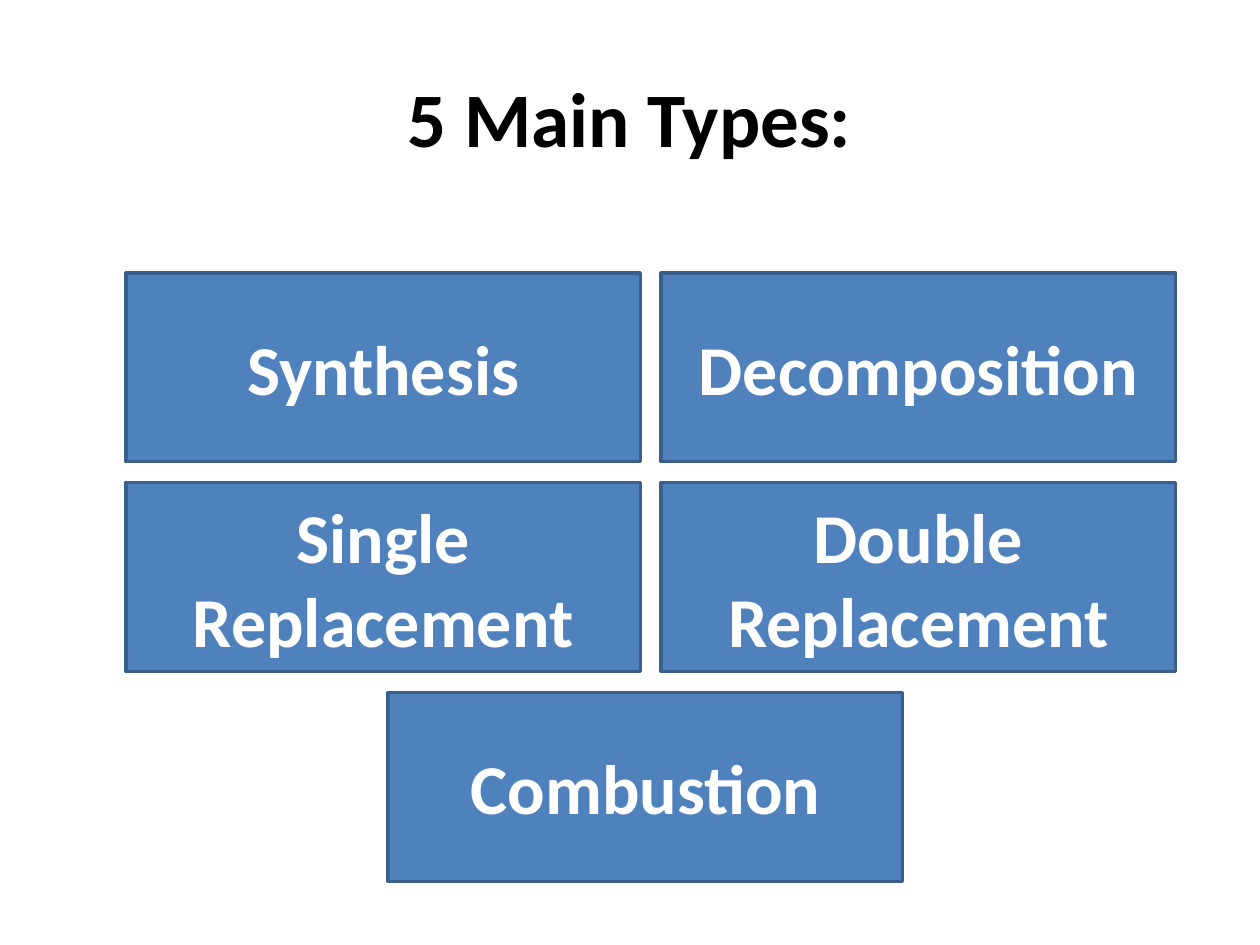
from dataclasses import dataclass

from pptx import Presentation
from pptx.dml.color import RGBColor
from pptx.enum.shapes import MSO_SHAPE
from pptx.enum.text import MSO_ANCHOR, PP_ALIGN
from pptx.shapes.autoshape import Shape
from pptx.slide import Slide
from pptx.util import Cm, Pt

BLACK = RGBColor(0x00, 0x00, 0x00)
WHITE = RGBColor(0xFF, 0xFF, 0xFF)
BLUE = RGBColor(0x4F, 0x81, 0xBD)
DARK_BLUE = RGBColor(0x3A, 0x5F, 0x8C)

FONT = "Calibri"

# Grid of reaction boxes, in centimetres
GRID_LEFT, GRID_TOP = 2.54, 5.5
BOX_WIDTH, BOX_HEIGHT = 10.37, 3.81
GAP = 0.42


@dataclass(frozen=True)
class Reaction:
    name: str
    column: float
    row: int


REACTIONS = [
    Reaction("Synthesis", 0, 0),
    Reaction("Single Replacement", 0, 1),
    Reaction("Decomposition", 1, 0),
    Reaction("Combustion", 0.49, 2),
    Reaction("Double Replacement", 1, 1),
]


def write_centred(shape: Shape, text: str, size: int, color: RGBColor) -> None:
    frame = shape.text_frame
    frame.word_wrap = True
    frame.vertical_anchor = MSO_ANCHOR.MIDDLE
    paragraph = frame.paragraphs[0]
    paragraph.alignment = PP_ALIGN.CENTER
    run = paragraph.add_run()
    run.text = text
    run.font.name = FONT
    run.font.size = Pt(size)
    run.font.bold = True
    run.font.color.rgb = color


def add_title(slide: Slide, text: str) -> None:
    title = slide.shapes.add_textbox(Cm(1.27), Cm(0.76), Cm(22.86), Cm(3.18))
    write_centred(title, text, 44, BLACK)


def add_reaction(slide: Slide, reaction: Reaction) -> None:
    box = slide.shapes.add_shape(
        MSO_SHAPE.RECTANGLE,
        Cm(GRID_LEFT + reaction.column * (BOX_WIDTH + GAP)),
        Cm(GRID_TOP + reaction.row * (BOX_HEIGHT + GAP)),
        Cm(BOX_WIDTH),
        Cm(BOX_HEIGHT),
    )
    box.shadow.inherit = False
    box.fill.solid()
    box.fill.fore_color.rgb = BLUE
    box.line.color.rgb = DARK_BLUE
    box.line.width = Pt(2)
    write_centred(box, reaction.name, 40, WHITE)


def main() -> None:
    presentation = Presentation()
    presentation.slide_width = Cm(25.4)
    presentation.slide_height = Cm(19.05)
    slide = presentation.slides.add_slide(presentation.slide_layouts[6])
    add_title(slide, "5 Main Types:")
    for reaction in REACTIONS:
        add_reaction(slide, reaction)
    presentation.save("out.pptx")


if __name__ == "__main__":
    main()
